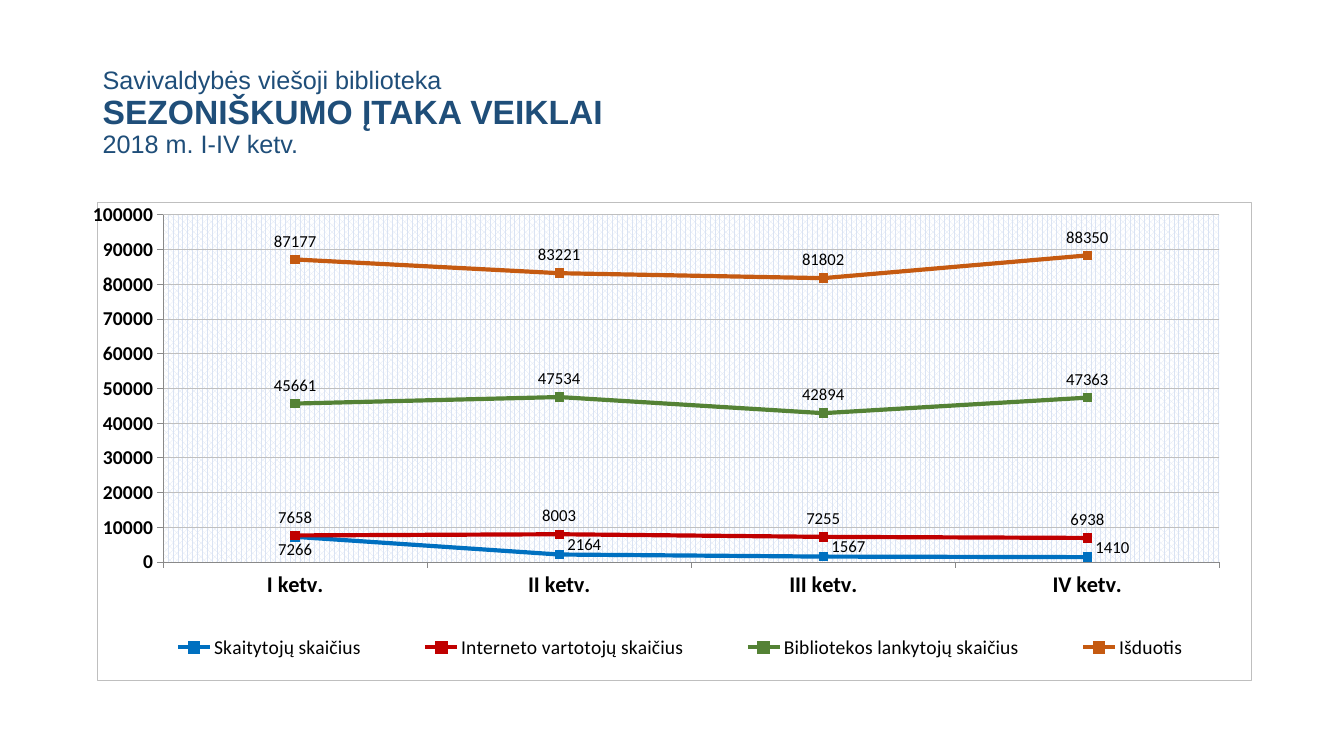
from lxml.etree import SubElement
from pptx import Presentation
from pptx.chart.data import CategoryChartData
from pptx.dml.color import RGBColor
from pptx.enum.chart import (XL_CHART_TYPE, XL_LABEL_POSITION, XL_LEGEND_POSITION,
                             XL_MARKER_STYLE, XL_TICK_MARK)
from pptx.enum.text import MSO_ANCHOR
from pptx.oxml import parse_xml
from pptx.oxml.ns import nsdecls, qn
from pptx.util import Inches, Pt

QUARTERS = ["I ketv.", "II ketv.", "III ketv.", "IV ketv."]
SERIES = [
    ("Skaitytojų skaičius", (7266, 2164, 1567, 1410), "0070C0"),
    ("Interneto vartotojų skaičius", (7658, 8003, 7255, 6938), "C00000"),
    ("Bibliotekos lankytojų skaičius", (45661, 47534, 42894, 47363), "548235"),
    ("Išduotis", (87177, 83221, 81802, 88350), "C55A11"),
]
TITLE = [
    ("Savivaldybės viešoji biblioteka", 18, False),
    ("SEZONIŠKUMO ĮTAKA VEIKLAI", 24, True),
    ("2018 m. I-IV ketv.", 18, False),
]
GREY = "BFBFBF"


def rgb(color):
    return RGBColor.from_string(color)


def set_font(font, size, color="000000", bold=False, name="Calibri"):
    font.name, font.size, font.bold = name, Pt(size), bold
    font.color.rgb = rgb(color)


def set_line(line, color, width):
    line.color.rgb, line.width = rgb(color), Pt(width)


def manual_layout(**values):
    layout = parse_xml(f"<c:layout {nsdecls('c')}/>")
    manual = SubElement(layout, qn("c:manualLayout"))
    for tag, val in values.items():
        SubElement(manual, qn(f"c:{tag}")).set("val", str(val))
    return layout


def add_title(s, x, y, w, h):
    tf = s.shapes.add_textbox(Inches(x), Inches(y), Inches(w), Inches(h)).text_frame
    tf.word_wrap = True
    tf.vertical_anchor = MSO_ANCHOR.MIDDLE
    p = tf.paragraphs[0]
    p.line_spacing = 0.9
    p.text = "\v".join(text for text, _, _ in TITLE)
    for r, (_, size, bold) in zip(p.runs, TITLE):
        set_font(r.font, size, "1F4E79", bold, "Arial")


def style_axes(chart):
    for axis, size in ((chart.category_axis, 16), (chart.value_axis, 14)):
        set_font(axis.tick_labels.font, size, bold=True)
        axis.major_tick_mark = XL_TICK_MARK.OUTSIDE
        axis.minor_tick_mark = XL_TICK_MARK.NONE
        set_line(axis.format.line, "898989", 0.75)
    axis = chart.value_axis
    axis.minimum_scale, axis.maximum_scale, axis.major_unit = 0, 100000, 10000
    set_line(axis.major_gridlines.format.line, GREY, 0.75)


def style_legend(chart):
    chart.has_legend = True
    legend = chart.legend
    legend.position = XL_LEGEND_POSITION.BOTTOM
    legend.include_in_layout = False
    set_font(legend.font, 14)
    element = legend._element
    for old in element.findall(qn("c:layout")):
        element.remove(old)
    element.find(qn("c:legendPos")).addnext(
        manual_layout(xMode="edge", yMode="edge", x=0.02, y=0.88, w=0.97, h=0.1))


def style_series(series, color):
    series.smooth = False
    set_line(series.format.line, color, 3)
    marker = series.marker
    marker.style, marker.size = XL_MARKER_STYLE.SQUARE, 6
    marker.format.fill.solid()
    marker.format.fill.fore_color.rgb = rgb(color)
    set_line(marker.format.line, color, 0.75)
    labels = series.data_labels
    labels.show_value = True
    labels.position = XL_LABEL_POSITION.ABOVE
    set_font(labels.font, 12)


def place_reader_labels(series):
    # First label below its marker, the rest in the gap under the red line
    for i in range(len(QUARTERS)):
        label = series.points[i].data_label
        set_font(label.font, 12)
        label.position = XL_LABEL_POSITION.RIGHT if i else XL_LABEL_POSITION.BELOW
        element = label._get_or_add_dLbl()
        element.find(qn("c:idx")).addnext(manual_layout(x=0, y=-0.02 if i else -0.01))


def style_areas(chart):
    # Inner plot placement
    space = chart._chartSpace
    plot_area = space.chart.plotArea
    for old in plot_area.findall(qn("c:layout")):
        plot_area.remove(old)
    plot_area.insert(0, manual_layout(layoutTarget="inner", xMode="edge", yMode="edge",
                                      x=0.057, y=0.027, w=0.915, h=0.725))
    # Patterned plot background
    plot_area.append(parse_xml(
        f'<c:spPr {nsdecls("c", "a")}><a:pattFill prst="pct70">'
        '<a:fgClr><a:srgbClr val="DAE3F3"/></a:fgClr>'
        '<a:bgClr><a:srgbClr val="FFFFFF"/></a:bgClr></a:pattFill></c:spPr>'))
    # Square chart frame with a thin border
    space.find(qn("c:date1904")).addnext(
        parse_xml(f'<c:roundedCorners {nsdecls("c")} val="0"/>'))
    space.chart.addnext(parse_xml(
        f'<c:spPr {nsdecls("c", "a")}><a:noFill/><a:ln w="9525"><a:solidFill>'
        f'<a:srgbClr val="{GREY}"/></a:solidFill></a:ln></c:spPr>'))


def add_activity_chart(s, x, y, w, h):
    data = CategoryChartData()
    data.categories = QUARTERS
    for name, values, _ in SERIES:
        data.add_series(name, values)
    chart = s.shapes.add_chart(XL_CHART_TYPE.LINE_MARKERS, Inches(x), Inches(y),
                               Inches(w), Inches(h), data).chart
    chart.has_title = False
    set_font(chart.font, 10)
    plot = chart.plots[0]
    plot.vary_by_categories = False
    style_axes(chart)
    style_legend(chart)
    for series, (_, _, color) in zip(plot.series, SERIES):
        style_series(series, color)
    place_reader_labels(plot.series[0])
    style_areas(chart)


def main():
    prs = Presentation()
    prs.slide_width, prs.slide_height = Inches(13.33), Inches(7.5)
    s = prs.slides.add_slide(prs.slide_layouts[6])
    add_title(s, 0.92, 0.4, 11.5, 1.45)
    add_activity_chart(s, 0.92, 2, 11.5, 4.76)
    prs.save("out.pptx")


if __name__ == "__main__":
    main()
